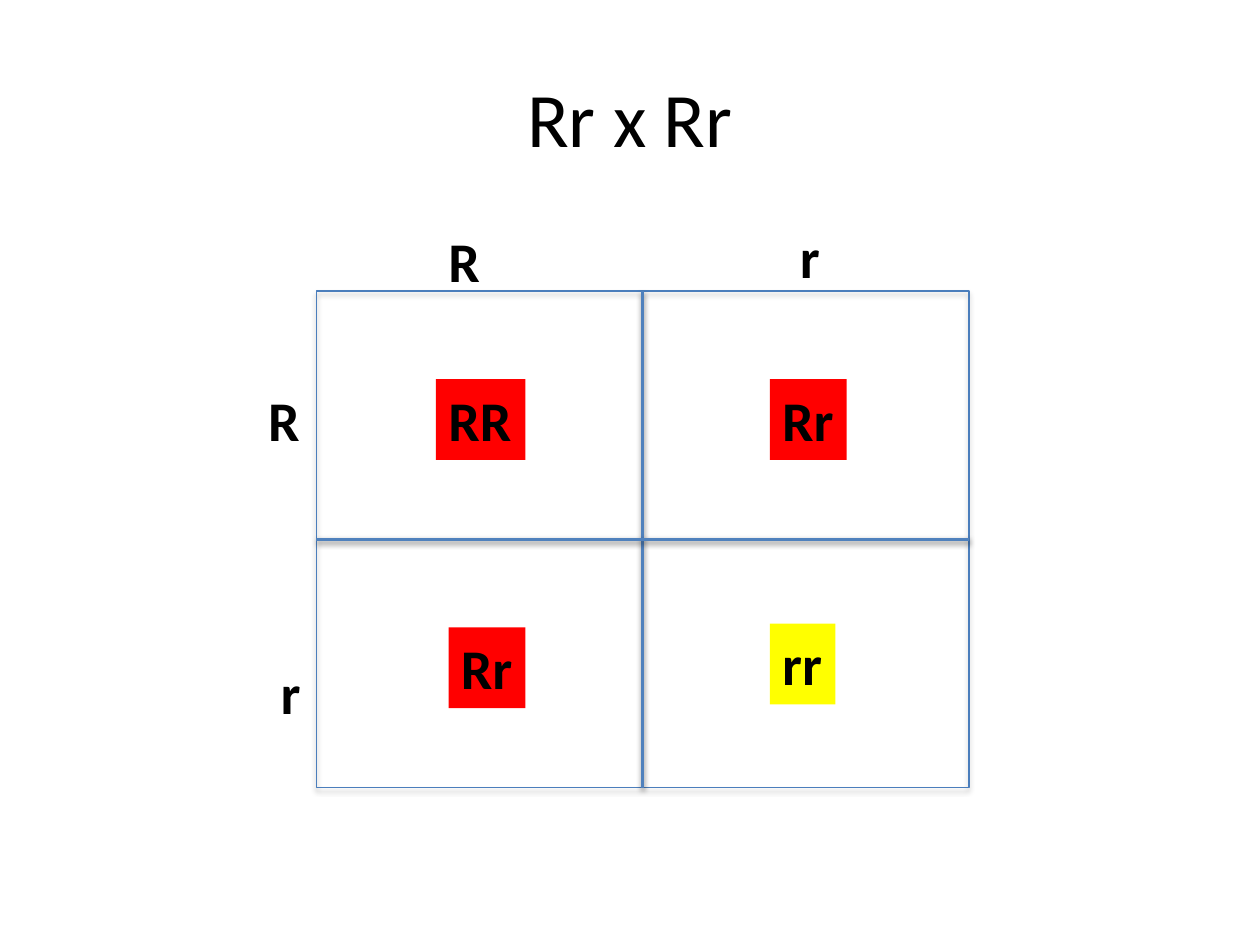
from dataclasses import dataclass
from typing import Optional

from lxml import etree
from pptx import Presentation
from pptx import util as u
from pptx.dml.color import RGBColor
from pptx.enum import shapes, text
from pptx.oxml import ns

BOLD_LABEL = {"name": "Calibri", "size": u.Pt(32), "bold": True}
TITLE = {"name": "Calibri", "size": u.Pt(44), "bold": False}


@dataclass
class Allele:
    wording: str
    left: float
    top: float
    width: float
    fill: Optional[str] = None


ALLELES = [
    # Parent gametes
    Allele("R", 3.46, 1.75, 0.45),
    Allele("R", 2.03, 3.01, 0.45),
    Allele("r", 6.25, 1.72, 0.36),
    Allele("r", 2.13, 5.18, 0.36),
    # Offspring genotypes
    Allele("RR", 3.46, 3.01, 0.71, "FF0000"),
    Allele("Rr", 6.11, 3.01, 0.61, "FF0000"),
    Allele("Rr", 3.56, 4.98, 0.61, "FF0000"),
    Allele("rr", 6.11, 4.95, 0.52, "FFFF00"),
]


def color(value: str) -> RGBColor:
    return RGBColor.from_string(value)


def write(para, wording: str, formats: dict) -> None:
    span = para.add_run()
    span.text = wording
    for key, value in formats.items():
        setattr(span.font, key, value)
    span.font.color.rgb = color("000000")


def add_shadow(item, distance: float, opacity: int) -> None:
    """Drop a soft black shadow straight down; distance is in points."""
    effects = etree.SubElement(item.element.spPr, ns.qn("a:effectLst"))
    shadow = etree.SubElement(
        effects, ns.qn("a:outerShdw"), blurRad=str(u.Pt(3.1)),
        dist=str(u.Pt(distance)), dir="5400000", rotWithShape="0")
    black = etree.SubElement(shadow, ns.qn("a:srgbClr"), val="000000")
    etree.SubElement(black, ns.qn("a:alpha"), val=str(opacity * 1000))


def add_allele(page, allele: Allele) -> None:
    box = page.shapes.add_textbox(
        u.Inches(allele.left), u.Inches(allele.top),
        u.Inches(allele.width), u.Inches(0.64))
    if allele.fill:
        box.fill.solid()
        box.fill.fore_color.rgb = color(allele.fill)
    box.text_frame.word_wrap = False
    box.text_frame.auto_size = text.MSO_AUTO_SIZE.SHAPE_TO_FIT_TEXT
    write(box.text_frame.paragraphs[0], allele.wording, BOLD_LABEL)


def add_divider(page, square, begin_side: int, end_side: int) -> None:
    divider = page.shapes.add_connector(shapes.MSO_CONNECTOR.STRAIGHT, 0, 0, 0, 0)
    divider.begin_connect(square, begin_side)
    divider.end_connect(square, end_side)
    divider.line.color.rgb = color("4F81BD")
    divider.line.width = u.Pt(2)
    add_shadow(divider, 1.6, 38)


def main() -> None:
    deck = Presentation()
    deck.slide_width, deck.slide_height = u.Inches(10), u.Inches(7.5)
    page = deck.slides.add_slide(deck.slide_layouts[5])

    # Title
    title = page.shapes.title
    title.left, title.top = u.Inches(0.5), u.Inches(0.3)
    title.width, title.height = u.Inches(9), u.Inches(1.25)
    title.text_frame.vertical_anchor = text.MSO_ANCHOR.MIDDLE
    heading = title.text_frame.paragraphs[0]
    heading.alignment = text.PP_ALIGN.CENTER
    write(heading, "Rr x Rr", TITLE)

    # Punnett square
    square = page.shapes.add_shape(
        shapes.MSO_SHAPE.RECTANGLE,
        u.Inches(2.51), u.Inches(2.31), u.Inches(5.18), u.Inches(3.94))
    square.fill.background()
    square.line.color.rgb = color("4B7EBC")
    square.line.width = u.Pt(0.75)
    add_shadow(square, 1.8, 35)
    add_divider(page, square, 0, 2)
    add_divider(page, square, 1, 3)

    # Gametes and genotypes
    for allele in ALLELES:
        add_allele(page, allele)

    deck.save("out.pptx")


if __name__ == "__main__":
    main()
